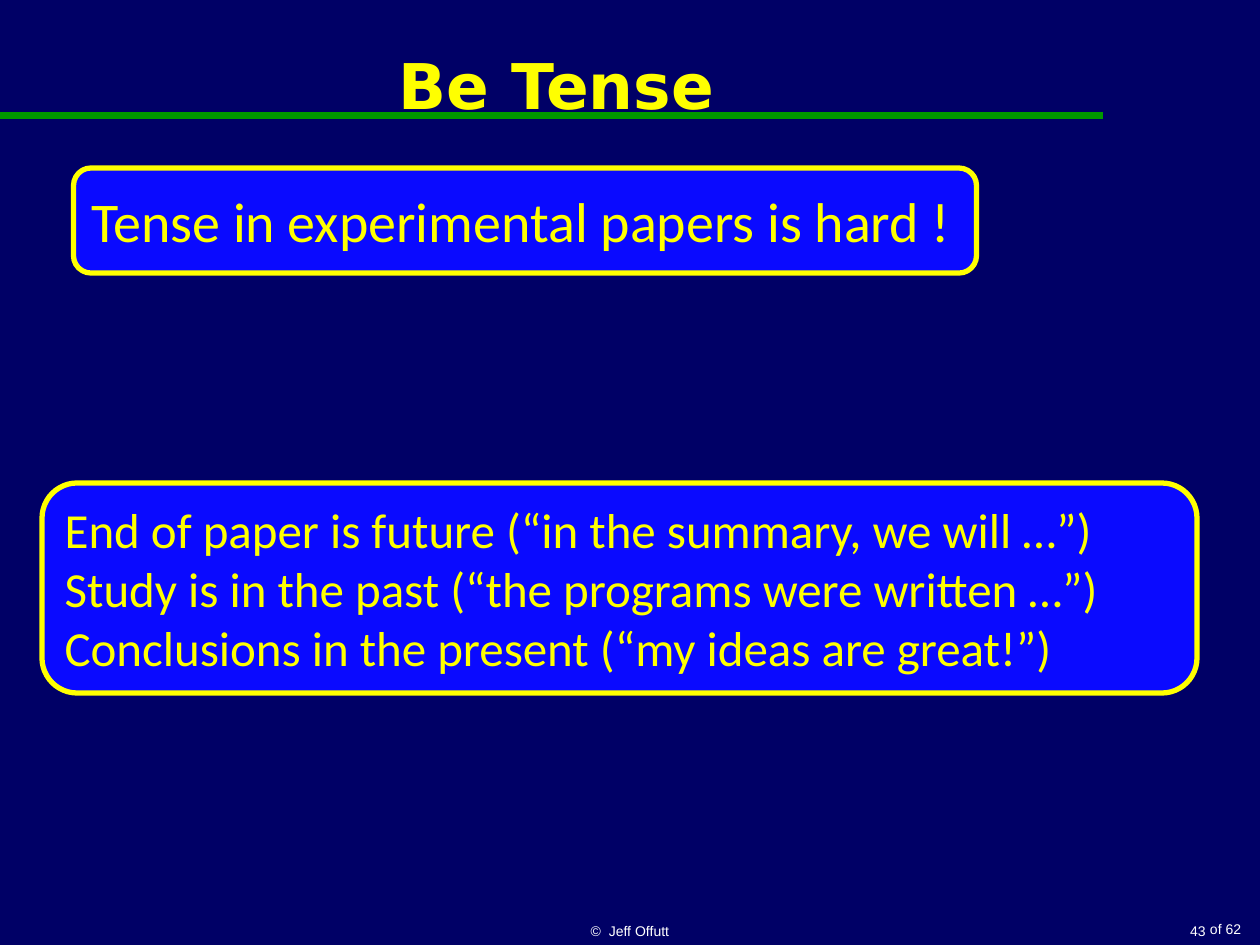
from lxml.etree import SubElement
from pptx import Presentation
from pptx.dml.color import RGBColor
from pptx.enum.shapes import MSO_CONNECTOR, MSO_SHAPE
from pptx.enum.text import MSO_ANCHOR, PP_ALIGN
from pptx.oxml.ns import qn
from pptx.util import Inches, Pt

NAVY = RGBColor(0x00, 0x00, 0x66)
BLUE = RGBColor(0x0A, 0x0A, 0xFF)
GREEN = RGBColor(0x00, 0x99, 0x00)
YELLOW = RGBColor(0xFF, 0xFF, 0x00)
WHITE = RGBColor(0xFF, 0xFF, 0xFF)


def grid(*cells):
    """Turn cells of a 120 by 90 grid into lengths."""
    return [Inches(cell / 12) for cell in cells]


def write(shape, text, font, size, color, align, anchor, bold=False):
    frame = shape.text_frame
    frame.text = text
    frame.vertical_anchor = anchor
    for para in frame.paragraphs:
        para.alignment = align
        for run in para.runs:
            run.font.name = font
            run.font.size = Pt(size)
            run.font.bold = bold
            run.font.color.rgb = color


deck = Presentation()
deck.slide_width, deck.slide_height = grid(120, 90)
slide = deck.slides.add_slide(deck.slide_layouts[5])
slide.background.fill.solid()
slide.background.fill.fore_color.rgb = NAVY
shapes = slide.shapes

# Title, with the green rule behind it
rule = shapes.add_connector(MSO_CONNECTOR.STRAIGHT, *grid(0, 11, 105, 11))
rule.line.color.rgb = GREEN
rule.line.width = Pt(4.5)
SubElement(rule._element.spPr, qn("a:effectLst"))
title = shapes.title
title._element.addprevious(rule._element)
title.left, title.top, title.width, title.height = grid(1, 0, 104, 16)
write(title, "Be Tense", "DejaVu Sans", 36, YELLOW,
      PP_ALIGN.CENTER, MSO_ANCHOR.MIDDLE, bold=True)

# Footer: credit, page number, page count
for text, place, align, anchor, wrap in [
    ("©  Jeff Offutt", (41, 86, 38, 4), PP_ALIGN.CENTER, MSO_ANCHOR.BOTTOM, True),
    ("43", (95, 86, 21, 4), PP_ALIGN.RIGHT, MSO_ANCHOR.BOTTOM, True),
    ("of 62", (114, 87.1, 5.4, 2.9), PP_ALIGN.RIGHT, MSO_ANCHOR.TOP, False),
]:
    note = shapes.add_textbox(*grid(*place))
    note.text_frame.word_wrap = wrap
    write(note, text, "Arial", 8, WHITE, align, anchor)

# Rounded panels
rules = [
    "End of paper is future (“in the summary, we will …”)",
    "Study is in the past (“the programs were written …”)",
    "Conclusions in the present (“my ideas are great!”)",
]
for text, place, size in [
    ("Tense in experimental papers is hard !", (7, 16, 86, 10), 32),
    ("\n".join(rules), (4, 46, 110, 20), 28),
]:
    panel = shapes.add_shape(MSO_SHAPE.ROUNDED_RECTANGLE, *grid(*place))
    panel.shadow.inherit = False
    panel.fill.solid()
    panel.fill.fore_color.rgb = BLUE
    panel.line.color.rgb = YELLOW
    panel.line.width = Pt(3)
    write(panel, text, "Calibri", size, YELLOW, PP_ALIGN.LEFT, MSO_ANCHOR.MIDDLE)

deck.save("out.pptx")
